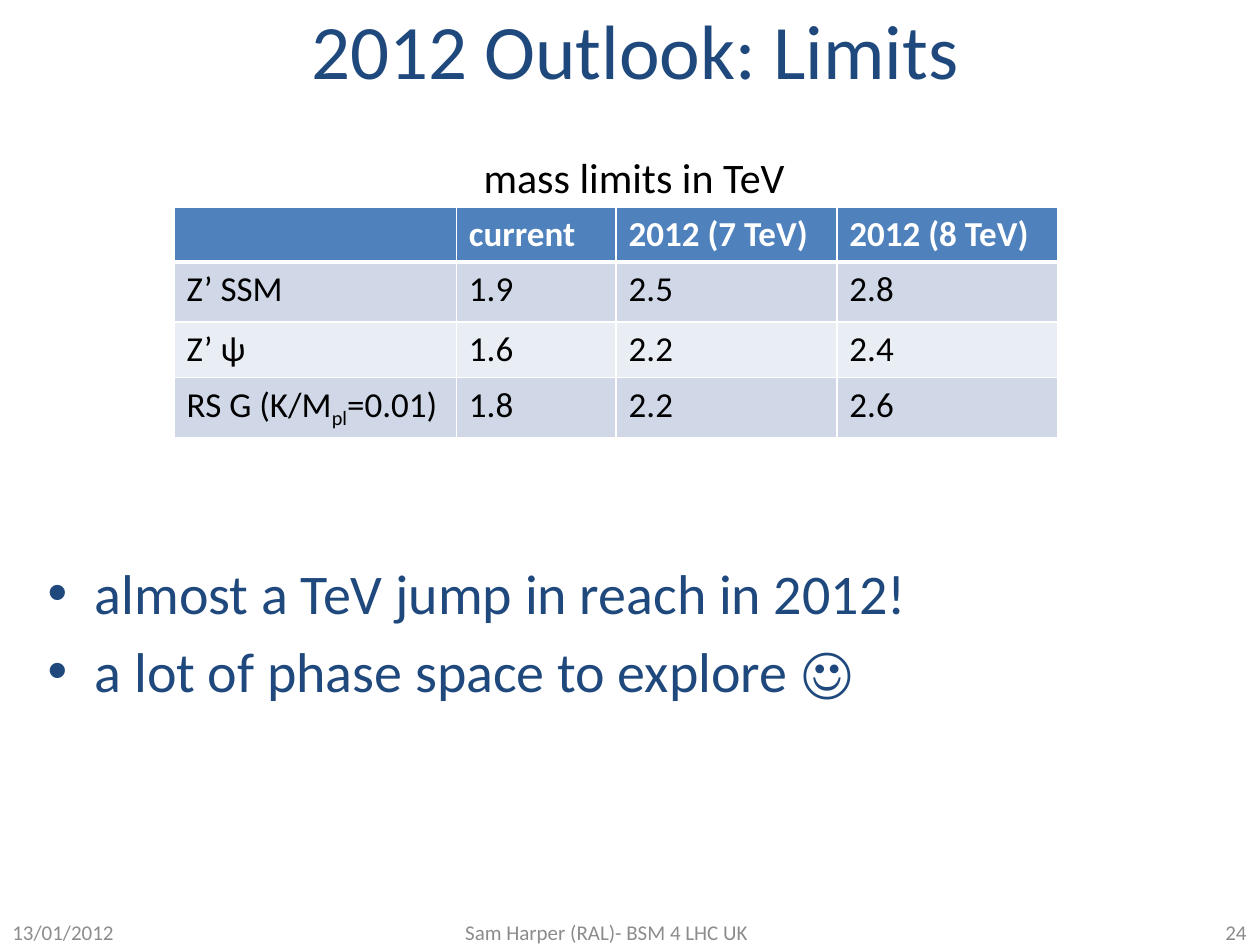
from lxml.etree import SubElement
from pptx import Presentation
from pptx.dml.color import RGBColor
from pptx.enum.text import MSO_ANCHOR, PP_ALIGN
from pptx.oxml.ns import qn
from pptx.util import Cm, Pt

NAVY, GREY, BLACK, WHITE = "1F497D", "8C8C8C", "000000", "FFFFFF"
HEADER_FILL, BAND_FILLS = "4F81BD", ("D0D8E8", "E9EDF4")

LIMITS = [
    ["", "current", "2012 (7 TeV)", "2012 (8 TeV)"],
    ["Z’ SSM", "1.9", "2.5", "2.8"],
    ["Z’ ψ", "1.6", "2.2", "2.4"],
    [("RS G (K/M", "pl", "=0.01)"), "1.8", "2.2", "2.6"],
]


def color(hex_value):
    return RGBColor.from_string(hex_value)


class SlideBuilder:
    """Holds the text style and the current slide, and adds elements to it."""

    font_name = "Calibri"

    def __init__(self, slide):
        self.slide = slide

    def style(self, paragraph, size, hex_value, bold=False):
        font = paragraph.font
        font.name, font.size, font.bold = self.font_name, Pt(size), bold
        font.color.rgb = color(hex_value)

    def text(self, box, lines, size, hex_value, align=PP_ALIGN.LEFT,
             anchor=MSO_ANCHOR.MIDDLE):
        frame = self.slide.shapes.add_textbox(*map(Cm, box)).text_frame
        frame.word_wrap = True
        frame.vertical_anchor = anchor
        frame.text = "\n".join(lines)
        for paragraph in frame.paragraphs:
            paragraph.alignment = align
            self.style(paragraph, size, hex_value)
        return frame

    def bullets(self, box, lines, size, hex_value):
        frame = self.text(box, lines, size, hex_value, anchor=MSO_ANCHOR.TOP)
        for paragraph in frame.paragraphs:
            paragraph.space_before = Pt(size * 0.2)
            properties = paragraph._p.get_or_add_pPr()
            properties.set("marL", str(Cm(0.95)))
            properties.set("indent", str(-Cm(0.95)))
            SubElement(properties, qn("a:buFont"), typeface="Arial")
            SubElement(properties, qn("a:buChar"), char="•")

    def borders(self, cell, bottom_width, top_width):
        widths = {"L": 1, "R": 1, "T": top_width, "B": bottom_width}
        for side, width in widths.items():
            line = SubElement(cell._tc.get_or_add_tcPr(), qn(f"a:ln{side}"), w=str(Pt(width)))
            SubElement(SubElement(line, qn("a:solidFill")), qn("a:srgbClr"), val=WHITE)

    def cell(self, cell, content, row):
        is_header = row == 0
        self.borders(cell, 3 if is_header else 1, 3 if row == 1 else 1)
        cell.fill.solid()
        cell.fill.fore_color.rgb = color(HEADER_FILL if is_header else BAND_FILLS[(row - 1) % 2])
        paragraph = cell.text_frame.paragraphs[0]
        self.style(paragraph, 20, WHITE if is_header else BLACK, is_header)
        if isinstance(content, str):
            paragraph.text = content
            return
        base, subscript, rest = [paragraph.add_run() for _ in content]
        base.text, subscript.text, rest.text = content
        subscript.font._element.set("baseline", "-25000")

    def table(self, left, top, widths, heights, rows):
        table = self.slide.shapes.add_table(
            len(rows), len(widths), Cm(left), Cm(top),
            Cm(sum(widths)), Cm(sum(heights))).table
        for column, width in zip(table.columns, widths):
            column.width = Cm(width)
        for index, (row, height, contents) in enumerate(zip(table.rows, heights, rows)):
            row.height = Cm(height)
            for cell, content in zip(row.cells, contents):
                self.cell(cell, content, index)


def main():
    presentation = Presentation()
    presentation.slide_width, presentation.slide_height = Cm(25.4), Cm(19.05)
    builder = SlideBuilder(presentation.slides.add_slide(presentation.slide_layouts[6]))

    builder.text((2.08, 0.08, 21.46, 1.8), ["2012 Outlook: Limits"], 44, NAVY, PP_ALIGN.CENTER)
    builder.bullets((0.71, 11.13, 21, 4.78),
                    ["almost a TeV jump in reach in 2012!",
                     "a lot of phase space to explore ☺"], 32, NAVY)

    footers = [
        (0, 5.92, "13/01/2012", PP_ALIGN.LEFT),
        (7.11, 10.24, "Sam Harper (RAL)- BSM 4 LHC UK", PP_ALIGN.CENTER),
        (19.46, 5.92, "24", PP_ALIGN.RIGHT),
    ]
    for left, width, content, align in footers:
        builder.text((left, 18.52, width, 0.53), [content], 12, GREY, align)

    builder.table(3.51, 4.17, (5.69, 3.22, 4.45, 4.45), (1.11, 1.21, 1.12, 1.18), LIMITS)
    builder.text((9.5, 2.92, 8.25, 1.27), ["mass limits in TeV"], 24, BLACK,
                 anchor=MSO_ANCHOR.TOP)
    presentation.save("out.pptx")


if __name__ == "__main__":
    main()
